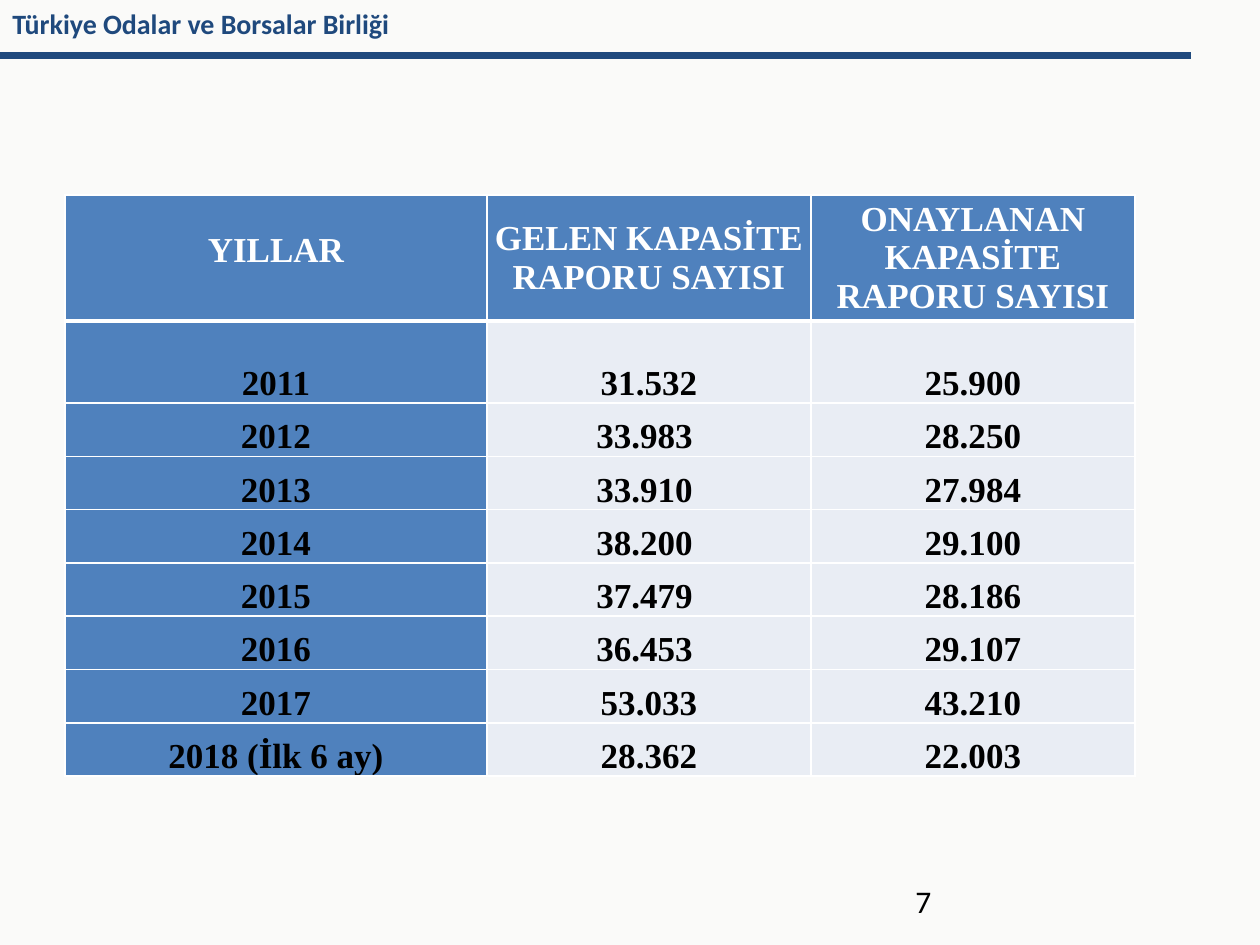
from lxml import etree
from pptx import Presentation
from pptx import util as u
from pptx.dml.color import RGBColor
from pptx.enum import shapes, text
from pptx.oxml import parse_xml
from pptx.oxml.ns import nsdecls, qn

PX = 914400 / 126
COLORS = {"navy": "1F497D", "blue": "4F81BD", "pale": "E9EDF4",
          "white": "FFFFFF", "black": "000000", "paper": "FAFAF9"}


def px(*lengths):
    return [u.Emu(round(length * PX)) for length in lengths]


def style(paragraph, face, size, color, bold=False):
    font = paragraph.font
    font.name, font.size, font.bold = face, u.Pt(size), bold
    font.color.rgb = RGBColor.from_string(COLORS[color])


deck = Presentation()
deck.slide_width, deck.slide_height = px(1260, 945)
slide = deck.slides.add_slide(deck.slide_layouts[6])
slide.background.fill.solid()
slide.background.fill.fore_color.rgb = RGBColor.from_string(COLORS["paper"])

rule = slide.shapes.add_connector(shapes.MSO_CONNECTOR.STRAIGHT, *px(0, 56, 1191, 56))
rule.line.color.rgb = RGBColor.from_string(COLORS["navy"])
rule.line.width = u.Pt(4)
etree.SubElement(rule._element.spPr, qn("a:effectLst"))

for wording, place, size, color, bold in [
    ("Türkiye Odalar ve Borsalar Birliği", (0, 0, 1027, 47), 16, "navy", True),
    ("7", (903, 876, 294, 50), 18, "black", False),
]:
    label = slide.shapes.add_textbox(*px(*place)).text_frame
    label.word_wrap = True
    label.text = wording
    style(label.paragraphs[0], "Calibri", size, color, bold)

reports = [
    ("YILLAR", "GELEN KAPASİTE RAPORU SAYISI", "ONAYLANAN KAPASİTE RAPORU SAYISI"),
    ("2011", "31.532", "25.900"),
    ("2012", "33.983 ", "28.250"),
    ("2013", "33.910 ", "27.984"),
    ("2014", "38.200 ", "29.100"),
    ("2015", "37.479 ", "28.186"),
    ("2016", "36.453 ", "29.107"),
    ("2017", "53.033", "43.210"),
    ("2018 (İlk 6 ay)", "28.362", "22.003"),
]
last = len(reports) - 1
table = slide.shapes.add_table(len(reports), 3, *px(65, 195, 1070, 581)).table
for column, width in zip(table.columns, px(422, 324, 324)):
    column.width = width
for row, height in zip(table.rows, px(126, 82, *[373 / 7] * 7)):
    row.height = height

for r, values in enumerate(reports):
    for c, value in enumerate(values):
        cell = table.cell(r, c)
        cell.text = value
        cell.margin_left = cell.margin_right = u.Inches(0.05)
        cell.margin_top = cell.margin_bottom = 0
        cell.vertical_anchor = text.MSO_ANCHOR.BOTTOM if r else text.MSO_ANCHOR.MIDDLE

        paragraph = cell.text_frame.paragraphs[0]
        paragraph.alignment = text.PP_ALIGN.CENTER
        if r == 0 and c > 0:
            paragraph.space_after = u.Pt(6)
        elif r < last or c == 2:
            paragraph.line_spacing = u.Pt(14)
        style(paragraph, "Times New Roman", 20, "black" if r else "white", True)

        for side in "LRTB":
            thick = (r, side) in [(0, "B"), (1, "T")]
            cell._tc.get_or_add_tcPr().append(parse_xml(
                f'<a:ln{side} {nsdecls("a")} w="{u.Pt(3 if thick else 1)}"><a:solidFill>'
                f'<a:srgbClr val="{COLORS["white"]}"/></a:solidFill></a:ln{side}>'))
        cell.fill.solid()
        cell.fill.fore_color.rgb = RGBColor.from_string(
            COLORS["pale" if r and c else "blue"])

deck.save("out.pptx")
